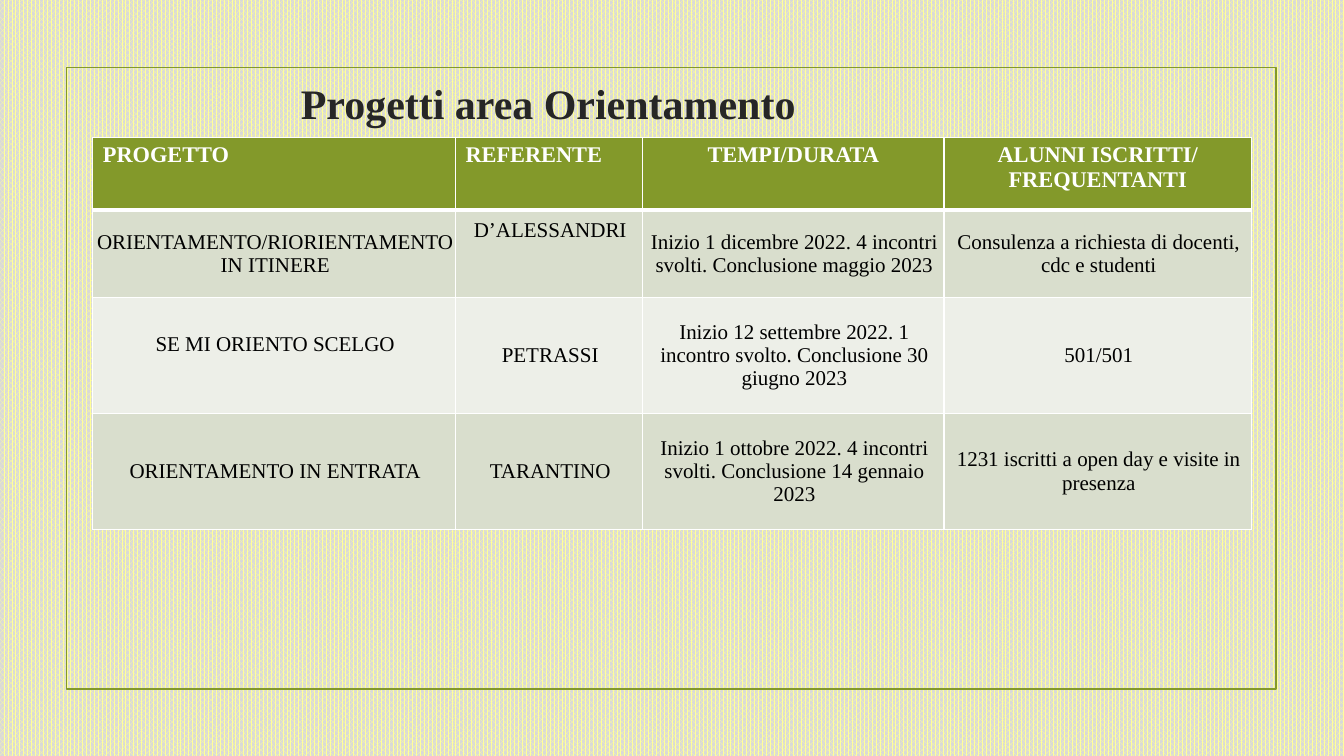
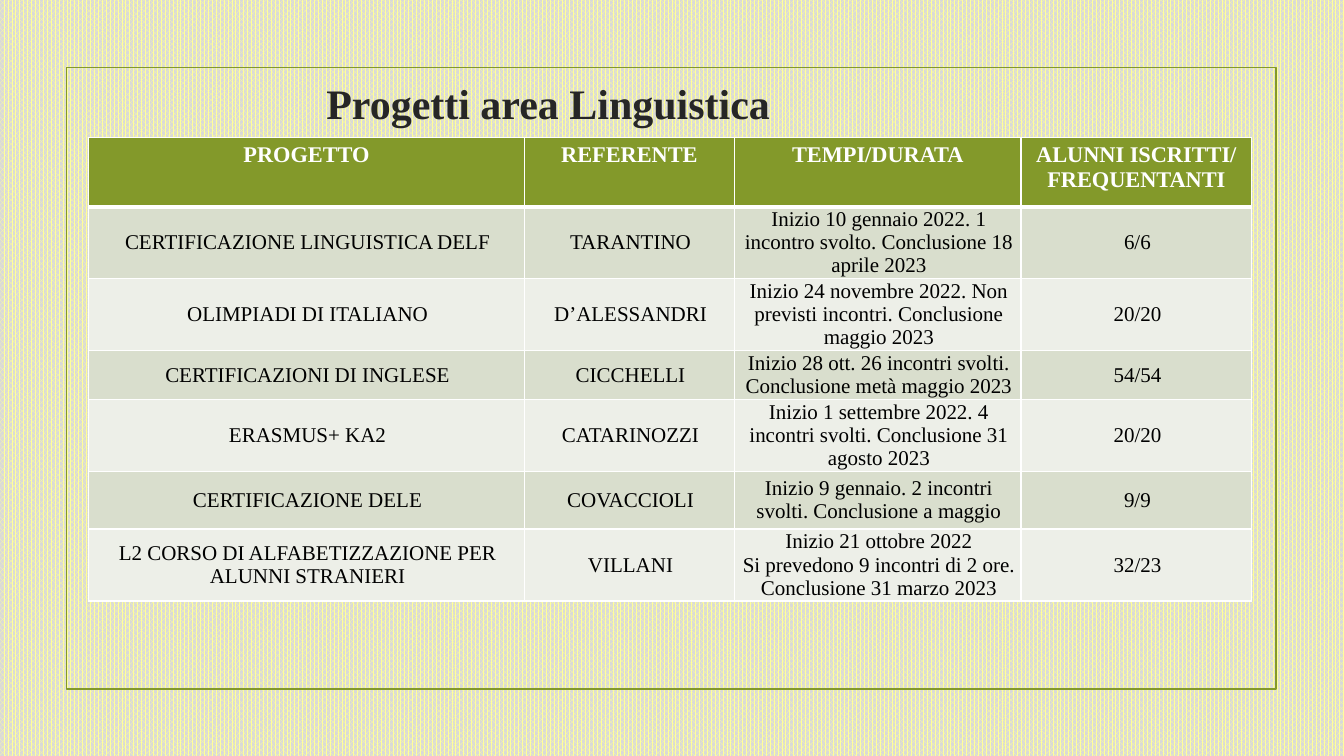
from lxml import etree
from pptx import Presentation
from pptx.dml.color import RGBColor
from pptx.enum.dml import MSO_PATTERN
from pptx.enum.shapes import MSO_SHAPE
from pptx.enum.text import MSO_ANCHOR, MSO_AUTO_SIZE, PP_ALIGN
from pptx.oxml.ns import qn
from pptx.util import Cm, Pt

# Shared style
FONT = "Times New Roman"
GREEN, WHITE, BLACK, DARK = "83992A", "FFFFFF", "000000", "262626"
BANDS = ["D9DECD", "EDEFE8"]
HEADERS = ["PROGETTO", "REFERENTE", "TEMPI/DURATA", "ALUNNI ISCRITTI/\nFREQUENTANTI"]
LEFT, CENTER = PP_ALIGN.LEFT, PP_ALIGN.CENTER

# Content: "raised" gives the bottom margin of cells whose text sits higher
SLIDES = [
    dict(
        title="Progetti area Orientamento",
        left=2.34,
        cols=[9.14, 4.72, 7.59, 7.75],
        heights=[1.83, 2.21, 2.92, 2.92],
        header_align=[LEFT, LEFT, CENTER, CENTER],
        raised={(1, 1): 1.2, (2, 0): 0.6},
        rows=[
            ["ORIENTAMENTO/RIORIENTAMENTO IN ITINERE", "D’ALESSANDRI",
             "Inizio 1 dicembre 2022. 4 incontri svolti. Conclusione maggio 2023",
             "Consulenza a richiesta di docenti, cdc e studenti"],
            ["SE MI ORIENTO SCELGO", "PETRASSI",
             "Inizio 12 settembre 2022. 1 incontro svolto. Conclusione 30 giugno 2023",
             "501/501"],
            ["ORIENTAMENTO IN ENTRATA", "TARANTINO",
             "Inizio 1 ottobre 2022. 4 incontri svolti. Conclusione 14 gennaio 2023",
             "1231 iscritti a open day e visite in presenza"],
        ],
    ),
    dict(
        title="Progetti area Linguistica",
        left=2.24,
        cols=[10.97, 5.31, 7.21, 5.82],
        heights=[1.75, 1.8, 1.8, 1.23, 1.8, 1.45, 1.8],
        header_align=[CENTER] * 4,
        raised={},
        rows=[
            ["CERTIFICAZIONE LINGUISTICA DELF", "TARANTINO",
             "Inizio 10 gennaio 2022. 1 incontro svolto. Conclusione 18 aprile 2023",
             "6/6"],
            ["OLIMPIADI DI ITALIANO", "D’ALESSANDRI",
             "Inizio 24 novembre 2022. Non previsti incontri. Conclusione maggio 2023",
             "20/20"],
            ["CERTIFICAZIONI DI INGLESE", "CICCHELLI",
             "Inizio 28 ott. 26 incontri svolti. Conclusione metà maggio 2023",
             "54/54"],
            ["ERASMUS+ KA2", "CATARINOZZI",
             "Inizio 1 settembre 2022. 4 incontri svolti. Conclusione 31 agosto 2023",
             "20/20"],
            ["CERTIFICAZIONE DELE", "COVACCIOLI",
             "Inizio 9 gennaio. 2 incontri svolti. Conclusione a maggio",
             "9/9"],
            ["L2 CORSO DI ALFABETIZZAZIONE PER ALUNNI STRANIERI", "VILLANI",
             "Inizio 21 ottobre 2022\n"
             "Si prevedono 9 incontri di 2 ore. Conclusione 31 marzo 2023",
             "32/23"],
        ],
    ),
]


def rgb(color):
    return RGBColor.from_string(color)


def write(tf, text, size, color, bold, align):
    """Fill a text frame, one paragraph for each line of text."""
    for i, line in enumerate(text.split("\n")):
        p = tf.add_paragraph() if i else tf.paragraphs[0]
        p.alignment = align
        r = p.add_run()
        r.text = line
        r.font.name, r.font.size, r.font.bold = FONT, Pt(size), bold
        r.font.color.rgb = rgb(color)


prs = Presentation()
prs.slide_width, prs.slide_height = Cm(33.87), Cm(19.05)

# Patterned background on the master
fill = prs.slide_master.background.fill
fill.patterned()
fill.pattern = MSO_PATTERN.PERCENT_75
fill.fore_color.rgb = rgb("FFFF99")
fill.back_color.rgb = rgb("D9D9D9")

for data in SLIDES:
    s = prs.slides.add_slide(prs.slide_layouts[5])

    # Frame
    frame = s.shapes.add_shape(MSO_SHAPE.RECTANGLE, Cm(1.68), Cm(1.7), Cm(30.48), Cm(15.67))
    frame.shadow.inherit = False
    frame.fill.background()
    frame.line.color.rgb = rgb(GREEN)
    frame.line.width = Pt(1.25)

    # Title
    title = s.shapes.title
    title.left, title.top, title.width, title.height = Cm(1.88), Cm(1.7), Cm(23.88), Cm(1.78)
    tf = title.text_frame
    tf.auto_size = MSO_AUTO_SIZE.NONE
    tf.vertical_anchor = MSO_ANCHOR.MIDDLE
    write(tf, data["title"], 30, DARK, True, CENTER)

    # Table grid
    cols, heights = data["cols"], data["heights"]
    table = s.shapes.add_table(len(heights), len(cols), Cm(data["left"]), Cm(3.46),
                               Cm(sum(cols)), Cm(sum(heights))).table
    for col, width in zip(table.columns, cols):
        col.width = Cm(width)
    for row, height in zip(table.rows, heights):
        row.height = Cm(height)

    # Table cells
    for i, texts in enumerate([HEADERS] + data["rows"]):
        for j, text in enumerate(texts):
            cell = table.cell(i, j)
            cell.fill.solid()
            if i == 0:
                cell.fill.fore_color.rgb = rgb(GREEN)
                write(cell.text_frame, text, 16, WHITE, True, data["header_align"][j])
            else:
                cell.fill.fore_color.rgb = rgb(BANDS[(i - 1) % 2])
                cell.vertical_anchor = MSO_ANCHOR.MIDDLE
                cell.margin_left, cell.margin_right = Cm(0.1), Cm(0.05)
                cell.margin_top = Cm(0.03)
                cell.margin_bottom = Cm(data["raised"].get((i, j), 0.03))
                write(cell.text_frame, text, 15, BLACK, False, CENTER)

            # White borders, thicker below the header row
            tcPr = cell._tc.get_or_add_tcPr()
            for k, side in enumerate(["lnL", "lnR", "lnT", "lnB"]):
                thick = (i, side) in [(0, "lnB"), (1, "lnT")]
                ln = etree.Element(qn("a:" + side), w=str(Pt(3 if thick else 1)))
                solid = etree.SubElement(ln, qn("a:solidFill"))
                etree.SubElement(solid, qn("a:srgbClr"), val=WHITE)
                tcPr.insert(k, ln)

prs.save("out.pptx")
